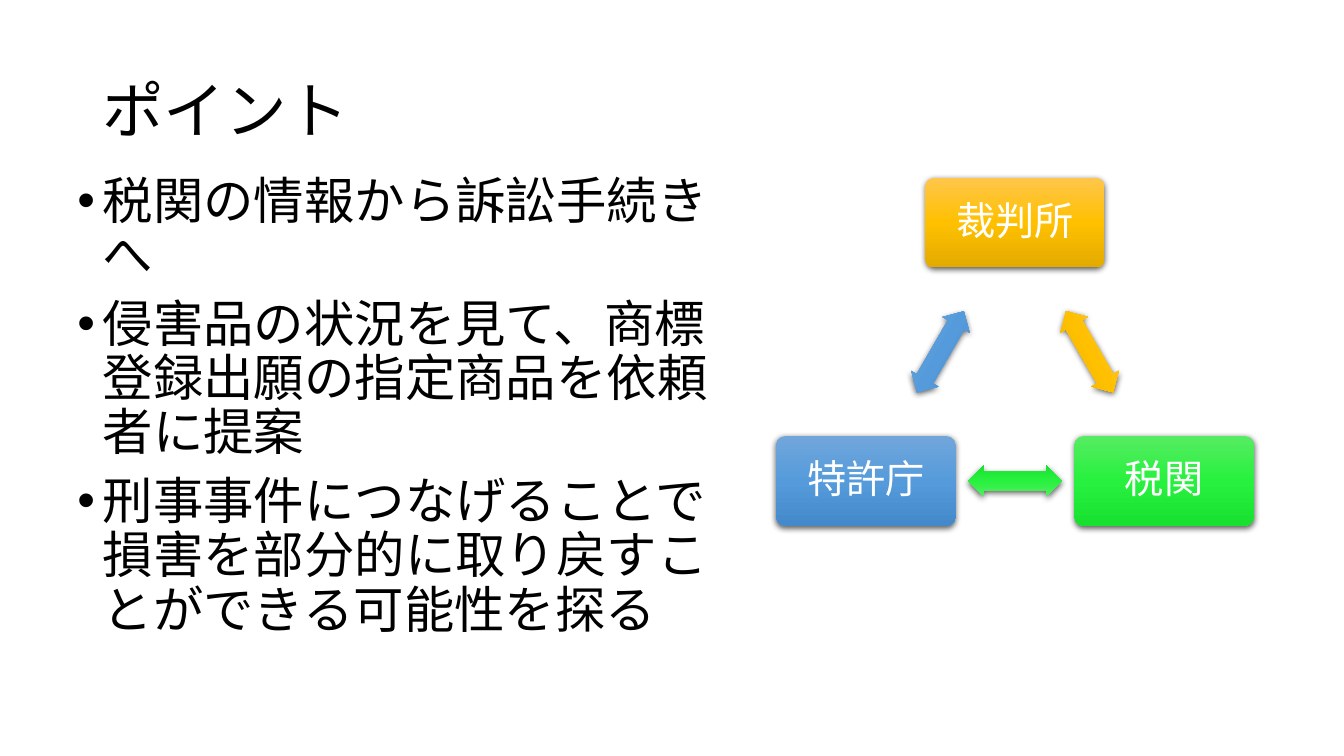
"""Slide of three key points beside a cycle of three offices."""
from math import cos, radians, sin

from lxml import etree
from pptx import Presentation
from pptx.dml.color import RGBColor
from pptx.enum.shapes import MSO_SHAPE
from pptx.enum.text import MSO_ANCHOR, PP_ALIGN
from pptx.oxml.ns import qn
from pptx.util import Cm, Pt

BOX, ARROW = MSO_SHAPE.ROUNDED_RECTANGLE, MSO_SHAPE.LEFT_RIGHT_ARROW
MIDDLE, TOP = MSO_ANCHOR.MIDDLE, MSO_ANCHOR.TOP
CENTER, LEFT = PP_ALIGN.CENTER, PP_ALIGN.LEFT
FONT = "Noto Sans CJK JP"

TITLE = ["ポイント"]
POINTS = [
    "税関の情報から訴訟手続きへ",
    "侵害品の状況を見て、商標登録出願の指定商品を依頼者に提案",
    "刑事事件につなげることで損害を部分的に取り戻すことができる可能性を探る",
]
OFFICES = [
    ("裁判所", ("FFC64B", "FFC000", "E3AB00")),
    ("税関", ("56EC62", "27F13E", "18E02F")),
    ("特許庁", ("71A6DB", "559BDB", "448ACA")),
]
HUB_X, HUB_Y, RADIUS = 25.58, 9.95, 4.34
BOX_SIZE, ARROW_SIZE = (4.52, 2.26), (2.36, 0.79)


def color(code):
    return RGBColor.from_string(code)


def add(parent, tag, **attrs):
    return etree.SubElement(parent, qn(tag), attrs)


def write(shape, lines, size, code, align, anchor):
    frame = shape.text_frame
    frame.word_wrap = True
    frame.vertical_anchor = anchor
    frame.text = "\n".join(lines)
    for para in frame.paragraphs:
        para.alignment = align
        para.line_spacing = 0.9
        font = para.runs[0].font
        font.size, font.name = Pt(size), FONT
        font.color.rgb = color(code)
        add(para.runs[0]._r.get_or_add_rPr(), "a:ea", typeface=FONT)
    return frame


def add_text(slide, area, lines, size, anchor):
    box = slide.shapes.add_textbox(*map(Cm, area))
    return write(box, lines, size, "000000", LEFT, anchor)


def add_bullets(frame):
    for para in frame.paragraphs:
        para.space_before = Pt(10)
        props = para._p.get_or_add_pPr()
        props.set("marL", str(Cm(0.64)))
        props.set("indent", str(-Cm(0.64)))
        add(props, "a:buFont", typeface="Arial")
        add(props, "a:buChar", char="•")


def add_part(slide, kind, x, y, size, codes):
    wide, high = size
    area = (x - wide / 2, y - high / 2, wide, high)
    part = slide.shapes.add_shape(kind, *map(Cm, area))
    part.line.fill.background()
    part.fill.gradient()
    part.fill.gradient_angle = 270
    stops = part._element.spPr.find(".//" + qn("a:gsLst"))
    stops.clear()
    for i, code in enumerate(codes):
        stop = add(stops, "a:gs", pos=str(i * 50000))
        add(stop, "a:srgbClr", val=code)
    part.shadow.inherit = False
    effects = part._element.spPr.find(qn("a:effectLst"))
    shade = add(effects, "a:outerShdw", blurRad=str(Pt(4.5)),
                dist=str(Pt(1.5)), dir="5400000", algn="ctr", rotWithShape="0")
    add(add(shade, "a:srgbClr", val="000000"), "a:alpha", val="63000")
    return part


def spot(angle, reach):
    turn = radians(angle)
    return HUB_X + reach * cos(turn), HUB_Y + reach * sin(turn)


def add_cycle(slide):
    for i, (name, codes) in enumerate(OFFICES):
        angle = 120 * i - 90
        box = add_part(slide, BOX, *spot(angle, RADIUS), BOX_SIZE, codes)
        box.adjustments[0] = 0.1
        frame = write(box, [name], 28, "FFFFFF", CENTER, MIDDLE)
        frame.paragraphs[0].space_after = Pt(9.8)

        arrow = add_part(slide, ARROW, *spot(angle + 60, RADIUS / 2),
                         ARROW_SIZE, codes)
        arrow.adjustments[0] = 0.6
        arrow.adjustments[1] = 0.5
        arrow.rotation = 60 + 120 * i


def main():
    deck = Presentation()
    deck.slide_width, deck.slide_height = Cm(33.87), Cm(19.05)
    slide = deck.slides.add_slide(deck.slide_layouts[6])
    add_text(slide, (2.33, 1.01, 29.21, 3.68), TITLE, 44, MIDDLE)
    body = add_text(slide, (1.7, 4.3, 16.46, 12.09), POINTS, 36, TOP)
    add_bullets(body)
    add_cycle(slide)
    deck.save("out.pptx")


if __name__ == "__main__":
    main()
